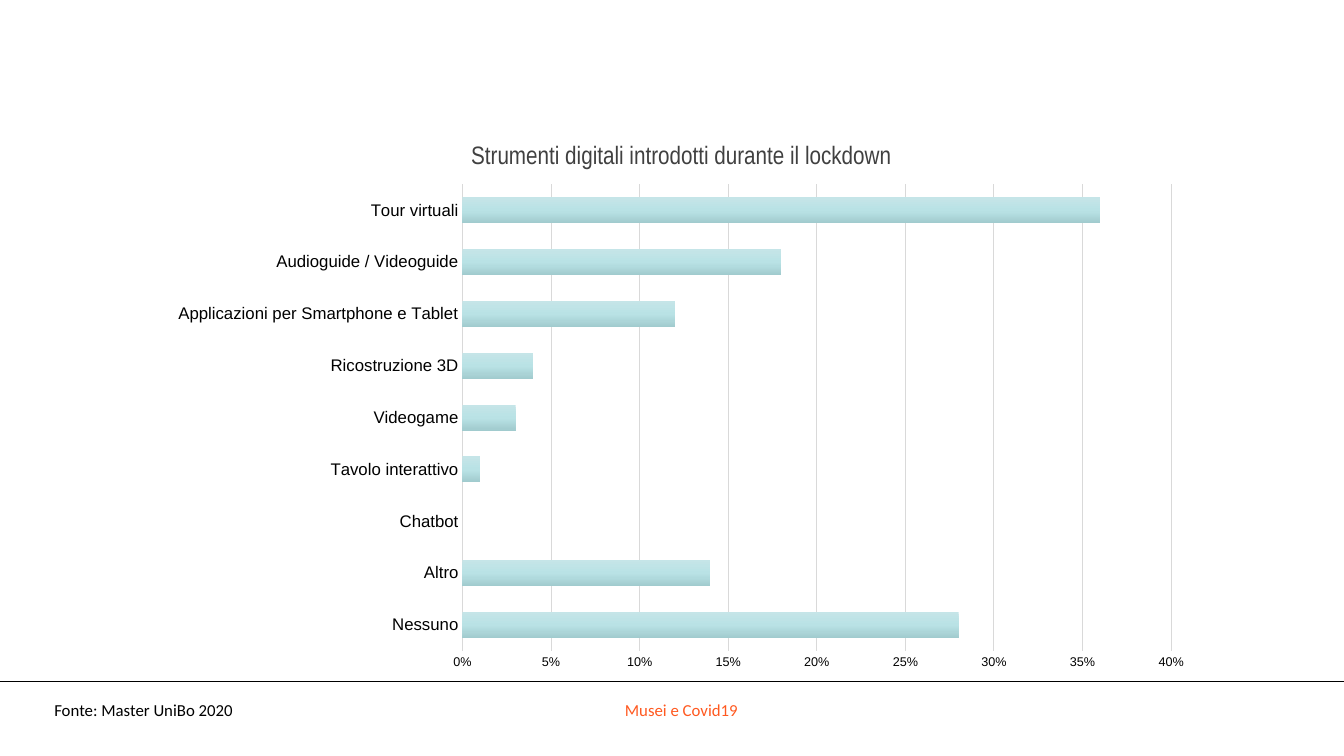
from dataclasses import dataclass

from lxml import etree
from pptx import Presentation
from pptx.chart.data import CategoryChartData
from pptx.dml.color import RGBColor
from pptx.enum import chart as ch, shapes, text
from pptx.oxml import parse_xml
from pptx.oxml.ns import nsdecls, qn
from pptx.util import Pt


@dataclass(frozen=True)
class Theme:
    ink: str = "000000"
    title: str = "404040"
    accent: str = "FF5920"
    grid: str = "D9D9D9"
    bar_stops: tuple = ((0, "C5E5E8"), (50, "B9E2E5"), (100, "A1CBCE"))
    body_font: str = "Calibri"
    title_font: str = "Arial Narrow"
    chart_font: str = "Arial"
    title_size: int = 18
    label_size: int = 12
    chart_size: int = 10
    tick_size: int = 9


@dataclass(frozen=True)
class Label:
    words: str
    left: float
    top: float
    width: float
    height: float
    font: str
    size: int
    color: str
    align: text.PP_ALIGN
    anchor: text.MSO_ANCHOR = text.MSO_ANCHOR.TOP


THEME = Theme()
SLIDE_W, SLIDE_H = 960, 540
RULE_Y = 486.72

TITLE = Label("Strumenti digitali introdotti durante il lockdown", 177.12, 95.76, 619.2, 28.8,
              THEME.title_font, THEME.title_size, THEME.title, text.PP_ALIGN.CENTER)
FOOTERS = (
    Label("Musei e Covid19", 31.68, 496.08, 910.08, 28.8,
          THEME.body_font, THEME.label_size, THEME.accent, text.PP_ALIGN.CENTER),
    Label("Fonte: Master UniBo 2020", 31.68, 496.08, 166.32, 21.6,
          THEME.body_font, THEME.label_size, THEME.ink, text.PP_ALIGN.LEFT,
          text.MSO_ANCHOR.MIDDLE),
)
TOOLS = {
    "Nessuno": 0.28,
    "Altro": 0.14,
    "Chatbot": 0,
    "Tavolo interattivo": 0.01,
    "Videogame": 0.03,
    "Ricostruzione 3D": 0.04,
    "Applicazioni per Smartphone e Tablet": 0.12,
    "Audioguide / Videoguide": 0.18,
    "Tour virtuali": 0.36,
}
# Inner plot area as fractions of the chart frame
PLOT_AREA = {"x": 0.29, "y": 0.02, "w": 0.68, "h": 0.92}


def style_font(font, name: str, size: int, color: str) -> None:
    font.name, font.size, font.bold = name, Pt(size), False
    font.color.rgb = RGBColor.from_string(color)


def fill_label(sp, label: Label) -> None:
    sp.left, sp.top = Pt(label.left), Pt(label.top)
    sp.width, sp.height = Pt(label.width), Pt(label.height)
    tf = sp.text_frame
    tf.word_wrap = True
    tf.auto_size = text.MSO_AUTO_SIZE.NONE
    tf.vertical_anchor = label.anchor
    p = tf.paragraphs[0]
    p.text = label.words
    p.alignment = label.align
    p.line_spacing = 1.0
    style_font(p.font, label.font, label.size, label.color)


def add_rule(s) -> None:
    rule = s.shapes.add_connector(shapes.MSO_CONNECTOR.STRAIGHT,
                                  Pt(0), Pt(RULE_Y), Pt(SLIDE_W), Pt(RULE_Y))
    rule.line.color.rgb = RGBColor.from_string(THEME.ink)
    rule.line.width = Pt(0.5)
    etree.SubElement(rule._element.spPr, qn("a:effectLst"))


def style_line(line, color: str) -> None:
    line.color.rgb = RGBColor.from_string(color)
    line.width = Pt(0.75)


def set_bar_gradient(series) -> None:
    stops = "".join(f'<a:gs pos="{pos * 1000}"><a:srgbClr val="{color}"/></a:gs>'
                    for pos, color in THEME.bar_stops)
    gradient = parse_xml(f'<a:gradFill {nsdecls("a")} rotWithShape="1"><a:gsLst>{stops}</a:gsLst>'
                         '<a:lin ang="5400000" scaled="0"/></a:gradFill>')
    series.format.fill.solid()
    solid = series._element.spPr.find(qn("a:solidFill"))
    solid.getparent().replace(solid, gradient)


def set_plot_area(chart) -> None:
    sizes = "".join(f'<c:{key} val="{value}"/>' for key, value in PLOT_AREA.items())
    layout = parse_xml(f'<c:layout {nsdecls("c")}><c:manualLayout><c:layoutTarget val="inner"/>'
                       f'<c:xMode val="edge"/><c:yMode val="edge"/>{sizes}'
                       '</c:manualLayout></c:layout>')
    area = chart._chartSpace.chart.plotArea
    for old in area.findall(qn("c:layout")):
        area.remove(old)
    area.insert(0, layout)


def add_tools_chart(s) -> None:
    data = CategoryChartData(number_format="0%")
    data.categories = list(TOOLS)
    data.add_series("Series 1", list(TOOLS.values()))
    chart = s.shapes.add_chart(ch.XL_CHART_TYPE.BAR_CLUSTERED, Pt(114.48), Pt(124.56),
                               Pt(744.48), Pt(362.16), data).chart
    chart.has_title = chart.has_legend = False
    style_font(chart.font, THEME.chart_font, THEME.chart_size, THEME.ink)

    # Bars
    plot = chart.plots[0]
    plot.gap_width = 100
    plot.vary_by_categories = False
    set_bar_gradient(plot.series[0])

    # Axes
    cats, vals = chart.category_axis, chart.value_axis
    for axis, size in ((cats, THEME.label_size), (vals, THEME.tick_size)):
        axis.major_tick_mark = axis.minor_tick_mark = ch.XL_TICK_MARK.NONE
        style_font(axis.tick_labels.font, THEME.chart_font, size, THEME.ink)
    style_line(cats.format.line, THEME.grid)
    vals.format.line.fill.background()
    vals.minimum_scale, vals.maximum_scale, vals.major_unit = 0, 0.4, 0.05
    vals.tick_labels.number_format = "0%"
    vals.tick_labels.number_format_is_linked = False
    vals.has_major_gridlines = True
    style_line(vals.major_gridlines.format.line, THEME.grid)
    set_plot_area(chart)


def main() -> None:
    prs = Presentation()
    prs.slide_width, prs.slide_height = Pt(SLIDE_W), Pt(SLIDE_H)
    s = prs.slides.add_slide(prs.slide_layouts[5])

    # Title and chart
    fill_label(s.shapes.title, TITLE)
    add_tools_chart(s)

    # Footer
    add_rule(s)
    for label in FOOTERS:
        fill_label(s.shapes.add_textbox(0, 0, 0, 0), label)

    prs.save("out.pptx")


if __name__ == "__main__":
    main()
